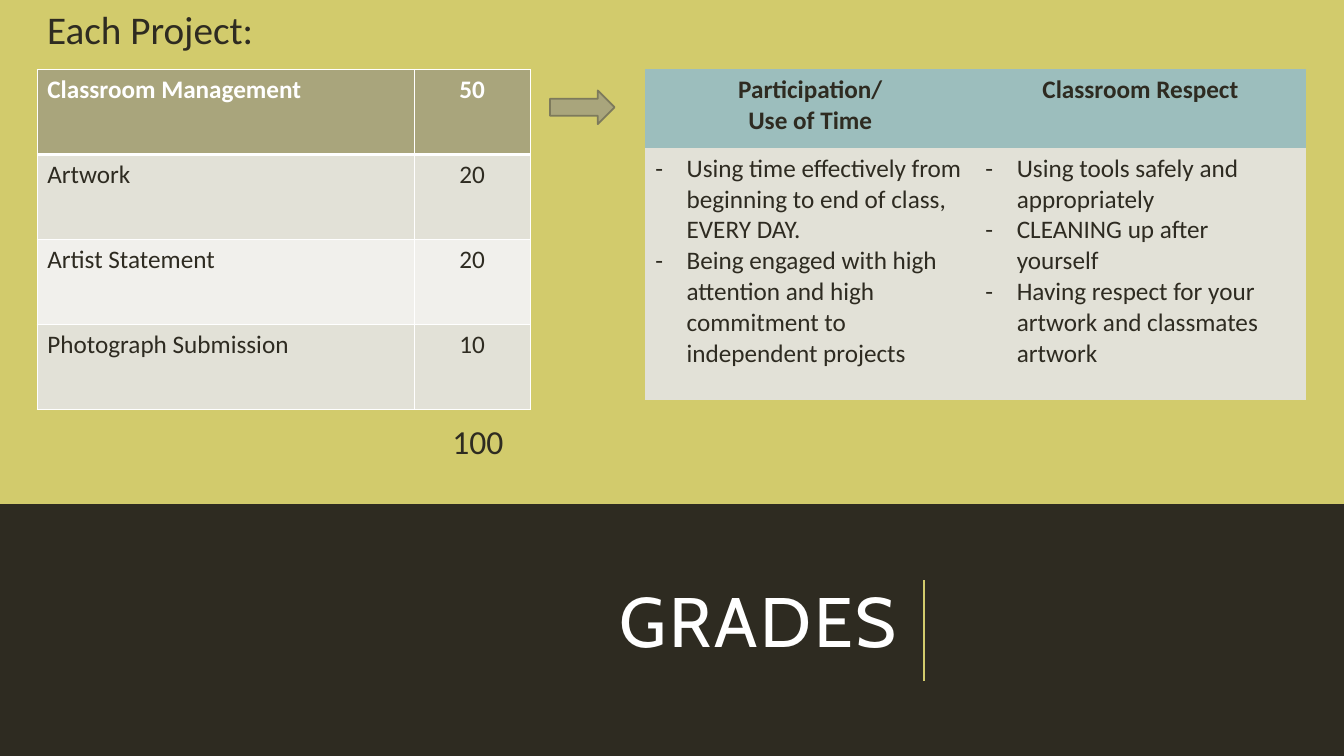
from dataclasses import dataclass

from lxml.etree import SubElement
from pptx import Presentation
from pptx.dml.color import RGBColor
from pptx.enum.shapes import MSO_CONNECTOR as Connector, MSO_SHAPE as Shape
from pptx.enum.text import MSO_ANCHOR as Anchor, MSO_AUTO_SIZE as AutoSize, PP_ALIGN as Align
from pptx.oxml.ns import qn
from pptx.util import Cm, Pt

TITLE = "GRADES"
HEADING = "Each Project:"
TOTAL = "100"
SCORES = [
    ("Classroom Management", "50"),
    ("Artwork", "20"),
    ("Artist Statement", "20"),
    ("Photograph Submission", "10"),
]
EXPECTATIONS = [
    (["Participation/", "Use of Time"], [
        "Using time effectively from beginning to end of class, EVERY DAY.",
        "Being engaged with high attention and high commitment to independent projects",
    ]),
    (["Classroom Respect"], [
        "Using tools safely and appropriately",
        "CLEANING up after yourself",
        "Having respect for your artwork and classmates artwork",
    ]),
]


@dataclass(frozen=True)
class Theme:
    dark: str = "2E2B21"
    lime: str = "D2CB6C"
    white: str = "FFFFFF"
    olive: str = "A9A57C"
    olive_line: str = "7D7A5C"
    teal: str = "9CBEBD"
    band: str = "E2E1D7"
    pale_band: str = "F1F0EC"
    title_font: str = "Cabin"
    body_font: str = "Calibri"
    title_size: int = 50
    heading_size: int = 28
    total_size: int = 24
    table_size: int = 18


THEME = Theme()
PLAIN_TABLE_STYLE = "{2D5ABB26-0587-4C30-8999-92F81FD0307C}"
SLIDE_WIDTH, SLIDE_HEIGHT = 33.87, 19.05
PANEL_HEIGHT = 12.7
TABLE_TOP = 1.75
SCORES_LEFT, SCORE_COLUMNS, SCORE_ROW = 0.94, (9.5, 2.92), 2.14
EXPECTATIONS_LEFT, EXPECTATION_COLUMN, EXPECTATION_ROWS = 16.26, 8.32, (1.99, 6.34)
HANGING_INDENT = 0.79


def paint(fill, color):
    fill.solid()
    fill.fore_color.rgb = RGBColor.from_string(color)


def write(frame, lines, size=THEME.table_size, font=THEME.body_font, color=THEME.dark,
          bold=False, align=Align.LEFT, bullet=None, line_spacing=None, tracking=None):
    frame.word_wrap = True
    for index, line in enumerate(lines):
        paragraph = frame.add_paragraph() if index else frame.paragraphs[0]
        paragraph.alignment = align
        if line_spacing:
            paragraph.line_spacing = line_spacing
        if bullet:
            properties = paragraph._p.get_or_add_pPr()
            properties.set("marL", str(Cm(HANGING_INDENT)))
            properties.set("indent", str(-Cm(HANGING_INDENT)))
            SubElement(properties, qn("a:buFont"), typeface=font)
            SubElement(properties, qn("a:buChar"), char=bullet)
        run = paragraph.add_run()
        run.text = line
        run.font.size = Pt(size)
        run.font.name = font
        run.font.bold = bold
        run.font.color.rgb = RGBColor.from_string(color)
        if tracking:
            run._r.get_or_add_rPr().set("spc", str(tracking * 100))


def add_text(slide, text, left, top, width, height, anchor=Anchor.TOP,
             auto_size=AutoSize.SHAPE_TO_FIT_TEXT, **style):
    frame = slide.shapes.add_textbox(Cm(left), Cm(top), Cm(width), Cm(height)).text_frame
    frame.vertical_anchor = anchor
    frame.auto_size = auto_size
    write(frame, [text], **style)


def add_panel(slide, preset, left, top, width, height, color):
    shape = slide.shapes.add_shape(preset, Cm(left), Cm(top), Cm(width), Cm(height))
    shape.shadow.inherit = False
    paint(shape.fill, color)
    shape.line.fill.background()
    return shape


def add_plain_table(slide, left, top, columns, rows):
    table = slide.shapes.add_table(len(rows), len(columns), Cm(left), Cm(top),
                                   Cm(sum(columns)), Cm(sum(rows))).table
    table.first_row = table.horz_banding = False
    table._tbl.tblPr.find(qn("a:tableStyleId")).text = PLAIN_TABLE_STYLE
    for column, width in zip(table.columns, columns):
        column.width = Cm(width)
    for row, height in zip(table.rows, rows):
        row.height = Cm(height)
    return table


def add_borders(cell, **widths):
    properties = cell._tc.get_or_add_tcPr()
    for side in "LRTB":
        line = SubElement(properties, qn(f"a:ln{side}"), w=str(Pt(widths.get(side, 1))))
        SubElement(SubElement(line, qn("a:solidFill")), qn("a:srgbClr"), val=THEME.white)


def add_scores(slide):
    table = add_plain_table(slide, SCORES_LEFT, TABLE_TOP, SCORE_COLUMNS,
                            [SCORE_ROW] * len(SCORES))
    for row, values in enumerate(SCORES):
        header = row == 0
        fill = THEME.olive if header else (THEME.pale_band, THEME.band)[row % 2]
        for column, value in enumerate(values):
            cell = table.cell(row, column)
            add_borders(cell, B=3 if header else 1, T=3 if row == 1 else 1)
            paint(cell.fill, fill)
            write(cell.text_frame, [value], bold=header,
                  color=THEME.white if header else THEME.dark,
                  align=Align.CENTER if column else Align.LEFT)


def add_expectations(slide):
    table = add_plain_table(slide, EXPECTATIONS_LEFT, TABLE_TOP,
                            [EXPECTATION_COLUMN] * len(EXPECTATIONS), EXPECTATION_ROWS)
    for column, (heading, points) in enumerate(EXPECTATIONS):
        top, body = table.cell(0, column), table.cell(1, column)
        paint(top.fill, THEME.teal)
        write(top.text_frame, heading, bold=True, align=Align.CENTER)
        paint(body.fill, THEME.band)
        write(body.text_frame, points, bullet="-")


def add_title_rule(slide):
    rule = slide.shapes.add_connector(Connector.STRAIGHT, Cm(23.29), Cm(17.16),
                                      Cm(23.29), Cm(14.62))
    rule.line.color.rgb = RGBColor.from_string(THEME.lime)
    rule.line.width = Pt(1.5)
    SubElement(rule._element.spPr, qn("a:effectLst"))


def main():
    presentation = Presentation()
    presentation.slide_width, presentation.slide_height = Cm(SLIDE_WIDTH), Cm(SLIDE_HEIGHT)
    slide = presentation.slides.add_slide(presentation.slide_layouts[6])
    paint(slide.background.fill, THEME.dark)

    add_title_rule(slide)
    add_panel(slide, Shape.RECTANGLE, 0, 0, SLIDE_WIDTH, PANEL_HEIGHT, THEME.lime)
    add_text(slide, TITLE, 1.27, 13.77, 21.59, 4.06, anchor=Anchor.MIDDLE,
             auto_size=AutoSize.NONE, size=THEME.title_size, font=THEME.title_font,
             color=THEME.white, align=Align.RIGHT, line_spacing=0.8, tracking=2)
    add_scores(slide)
    add_text(slide, HEADING, SCORES_LEFT, 0, sum(SCORE_COLUMNS), 1.45,
             size=THEME.heading_size)
    add_text(slide, TOTAL, 11.15, 10.49, 2.72, 1.27, size=THEME.total_size)
    add_expectations(slide)
    arrow = add_panel(slide, Shape.RIGHT_ARROW, 13.86, 2.28, 1.63, 0.85, THEME.olive)
    arrow.line.color.rgb = RGBColor.from_string(THEME.olive_line)
    arrow.line.width = Pt(1.25)

    presentation.save("out.pptx")


if __name__ == "__main__":
    main()
